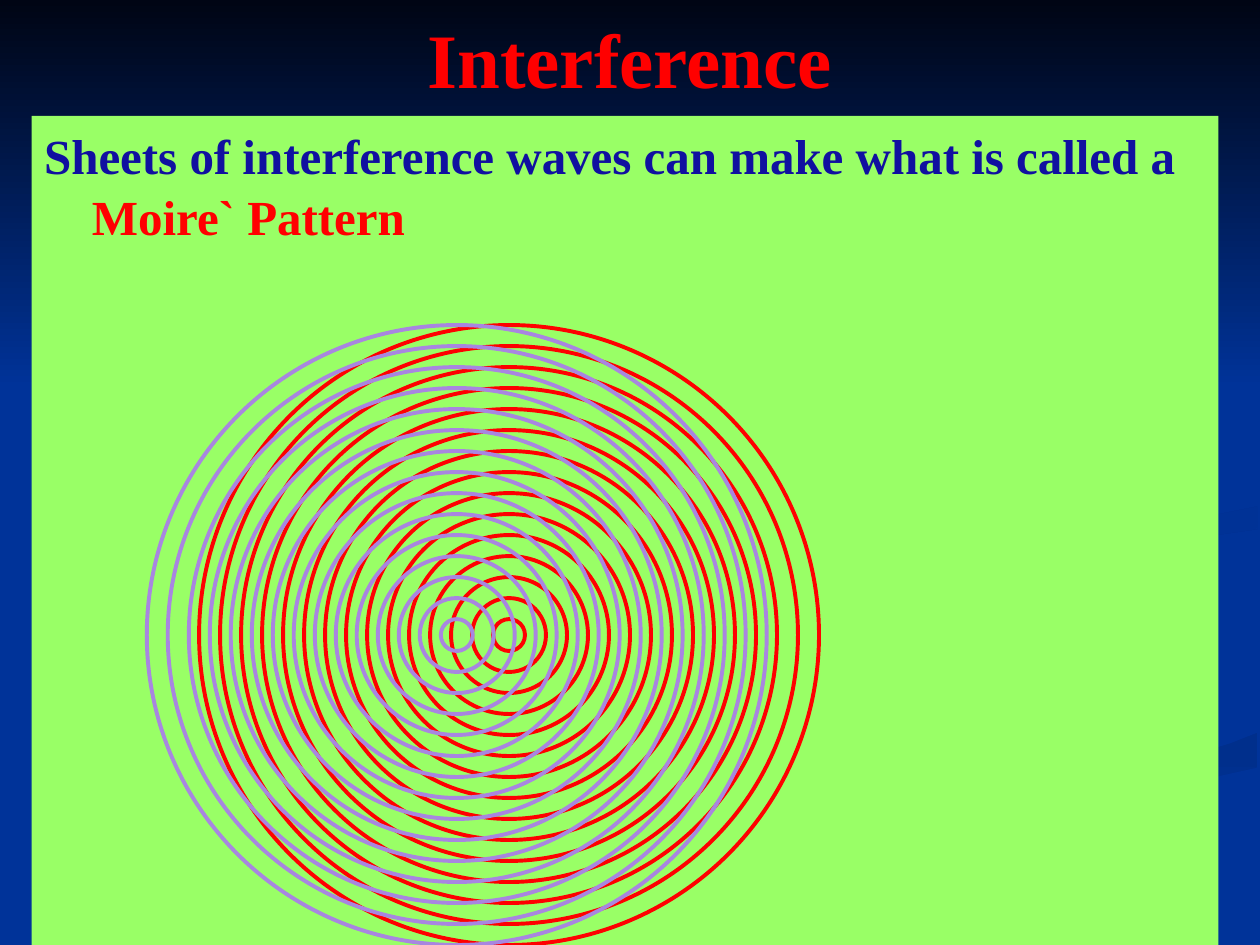
from pptx import Presentation
from pptx import util as u
from pptx.dml.color import RGBColor
from pptx.enum import shapes, text
from pptx.oxml.ns import qn
from lxml import etree

THEME = {
    "font": "Times New Roman",
    "title_size": 44,
    "body_size": 28,
    "red": "FF0000",
    "navy": "1010A0",
    "violet": "A886E0",
    "panel": "99FF66",
    "background": "003399",
    "ring_width": 2.25,
}

TITLE = "Interference"
BODY = [
    ("Sheets of interference waves can make what is called a ", "navy"),
    ("Moire` Pattern", "red"),
]

RING_CENTERS = [(4.04, "red"), (3.625, "violet")]
RING_CENTER_Y = 5.04
RING_COUNT = 15
LARGEST_RING = 4.92
RING_STEP = 1 / 3

BACKDROP = [
    (("003399", "003193"), 0, [
        (7.81, 5.53), (7.45, 5.38), (6.82, 5.19), (6.26, 5.02), (5.94, 4.85),
        (5.76, 4.69), (5.75, 4.59), (5.7, 4.72), (5.86, 4.87), (6.31, 5.05),
        (6.97, 5.25), (7.52, 5.43), (7.81, 5.56), (7.86, 5.66), (7.74, 5.83),
        (7.39, 5.98), (6.84, 6.13), (5.79, 6.39), (4.58, 6.74), (3.76, 7.07),
        (3, 7.49), (3.61, 7.49), (4.31, 7.14), (5.32, 6.74), (6.23, 6.47),
        (7.21, 6.23), (7.8, 6.05), (7.97, 5.88), (7.99, 5.73), (7.92, 5.61)]),
    (("002F8C", "003399"), 90, [
        (5.19, 7.47), (5.03, 7.49), (5.71, 7.49), (6, 7.33), (6.49, 7.1),
        (7.22, 6.82), (8.21, 6.51), (9.03, 6.3), (9.98, 6.09), (9.98, 5.81),
        (9.76, 5.9), (9.36, 6.02), (8.67, 6.2), (7.64, 6.47), (6.62, 6.81),
        (5.69, 7.19)]),
    (("003399", "003399"), 0, [
        (7.25, 4.64), (7.34, 4.83), (7.75, 5.03), (8.31, 5.19), (8.89, 5.35),
        (9.31, 5.53), (9.43, 5.7), (9.36, 5.87), (9.02, 6.03), (8.43, 6.18),
        (7.43, 6.43), (6.19, 6.84), (4.77, 7.49), (5.03, 7.49), (5.7, 7.19),
        (6.62, 6.81), (7.65, 6.47), (8.68, 6.2), (9.36, 6.02), (9.76, 5.9),
        (9.99, 5.81), (9.99, 5.38), (9.41, 5.27), (8.66, 5.09), (8.04, 4.85),
        (7.81, 4.63), (8, 4.42), (8.5, 4.27), (9.33, 4.15), (9.99, 4.02),
        (9.99, 3.87), (9.42, 3.99), (8.3, 4.15), (7.7, 4.27), (7.32, 4.46)]),
    (("003091", "003399"), 45, [
        (7.81, 4.6), (7.86, 4.74), (8.06, 4.87), (8.26, 4.96), (8.09, 4.84),
        (8.05, 4.72), (8.16, 4.59), (8.59, 4.43), (9.36, 4.29), (9.98, 4.2),
        (9.98, 4.02), (9.33, 4.15), (8.65, 4.24), (8.1, 4.37), (7.85, 4.53)]),
    (("000514", "003399"), 90, [(0, 0), (0, 3.08), (10, 3.08), (10, 0)]),
]


def color(value):
    return RGBColor.from_string(value)


def place(shape, left, top, width, height):
    shape.left, shape.top = u.Inches(left), u.Inches(top)
    shape.width, shape.height = u.Inches(width), u.Inches(height)


def add_backdrop(slide):
    for colors, angle, points in BACKDROP:
        corners = [(u.Inches(x), u.Inches(y)) for x, y in points]
        builder = slide.shapes.build_freeform(*corners[0])
        builder.add_line_segments(corners[1:], close=True)
        shape = builder.convert_to_shape()
        shape.shadow.inherit = False
        shape.line.fill.background()
        if colors[0] == colors[1]:
            shape.fill.solid()
            shape.fill.fore_color.rgb = color(colors[0])
            continue
        shape.fill.gradient()
        shape.fill.gradient_angle = -angle % 360
        for stop, value in zip(shape.fill.gradient_stops, colors):
            stop.color.rgb = color(value)


def add_run(paragraph, words, size, color_name):
    run = paragraph.add_run()
    run.text = words
    run.font.name = THEME["font"]
    run.font.size = u.Pt(size)
    run.font.bold = True
    run.font.color.rgb = color(THEME[color_name])


def fill_title(slide):
    title = slide.shapes.title
    place(title, 0, 0, 10, 0.92)
    frame = title.text_frame
    frame.auto_size = text.MSO_AUTO_SIZE.NONE
    frame.vertical_anchor = text.MSO_ANCHOR.MIDDLE
    paragraph = frame.paragraphs[0]
    paragraph.alignment = text.PP_ALIGN.CENTER
    add_run(paragraph, TITLE, THEME["title_size"], "red")


def fill_body(slide):
    body = slide.placeholders[1]
    place(body, 0.25, 0.92, 9.42, 6.58)
    body.fill.solid()
    body.fill.fore_color.rgb = color(THEME["panel"])
    frame = body.text_frame
    frame.auto_size = text.MSO_AUTO_SIZE.NONE
    frame.word_wrap = True
    frame.vertical_anchor = text.MSO_ANCHOR.TOP
    paragraph = frame.paragraphs[0]
    properties = paragraph._p.get_or_add_pPr()
    properties.set("marL", str(u.Inches(0.38)))
    properties.set("indent", str(u.Inches(-0.38)))
    etree.SubElement(properties, qn("a:buNone"))
    paragraph.space_before = u.Pt(0)
    paragraph.line_spacing = 1.05
    for words, color_name in BODY:
        add_run(paragraph, words, THEME["body_size"], color_name)


def add_rings(slide):
    for center_x, color_name in RING_CENTERS:
        group = slide.shapes.add_group_shape()
        for index in range(RING_COUNT):
            size = LARGEST_RING - index * RING_STEP
            ring = group.shapes.add_shape(
                shapes.MSO_SHAPE.OVAL,
                u.Inches(center_x - size / 2), u.Inches(RING_CENTER_Y - size / 2),
                u.Inches(size), u.Inches(size))
            ring.shadow.inherit = False
            ring.fill.background()
            ring.line.color.rgb = color(THEME[color_name])
            ring.line.width = u.Pt(THEME["ring_width"])


def main():
    presentation = Presentation()
    presentation.slide_width = u.Inches(10)
    presentation.slide_height = u.Inches(7.5)
    slide = presentation.slides.add_slide(presentation.slide_layouts[1])
    slide.background.fill.solid()
    slide.background.fill.fore_color.rgb = color(THEME["background"])
    placeholders = list(slide.placeholders)
    add_backdrop(slide)
    for placeholder in placeholders:
        slide.shapes._spTree.append(placeholder._element)
    fill_title(slide)
    fill_body(slide)
    add_rings(slide)
    presentation.save("out.pptx")


if __name__ == "__main__":
    main()
